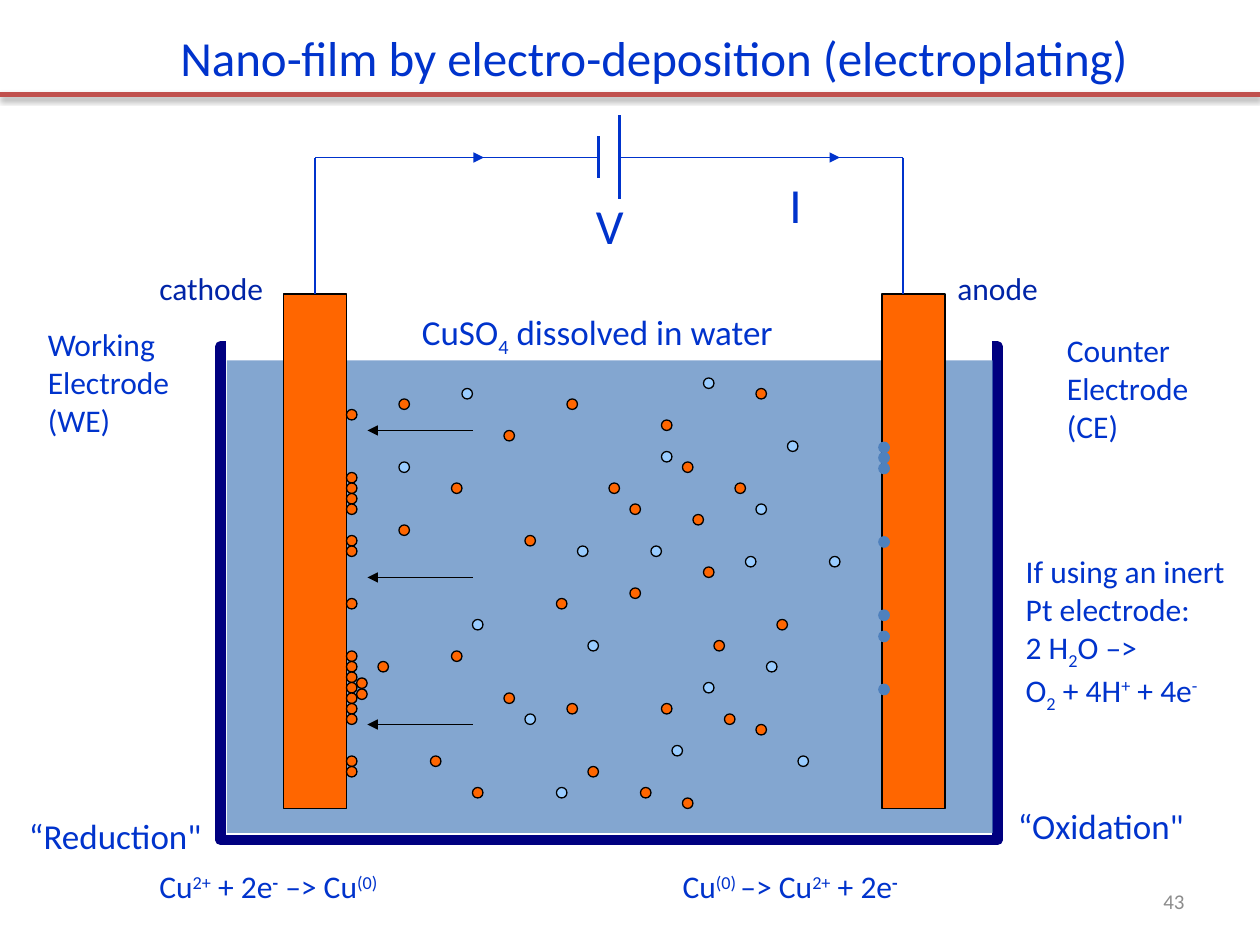
from lxml import etree
from pptx import Presentation
from pptx.dml.color import RGBColor
from pptx.enum import shapes, text
from pptx.oxml import ns
from pptx.util import Pt

BLUE = RGBColor(0x00, 0x33, 0xCC)
DARK_BLUE = RGBColor(0x00, 0x24, 0xA7)
NAVY = RGBColor(0x00, 0x00, 0x80)
WATER = RGBColor(0x4F, 0x81, 0xBD)
COPPER = RGBColor(0xFF, 0x66, 0x00)
PALE = RGBColor(0x99, 0xCC, 0xFF)
RED = RGBColor(0xC0, 0x50, 0x4D)
GREY = RGBColor(0x8C, 0x8C, 0x8C)
BLACK = RGBColor(0, 0, 0)
WHITE = RGBColor(0xFF, 0xFF, 0xFF)

SUP, SUB = 30, -25
ION = 6
RECT, OVAL = shapes.MSO_SHAPE.RECTANGLE, shapes.MSO_SHAPE.OVAL

TITLE = [["Nano-film by electro-deposition (electroplating)"]]

LABELS = [
    ((333.4, 108, 30, 41), [["V"]], {"size": 28}),
    ((444, 96, 21.6, 41), [["I"]], {"size": 28}),
    ((84, 492, 149, 29),
     [["Cu", ("2+", SUP), " + 2e", ("-", SUP, True), " –> Cu", ("(0)", SUP)]], {}),
    ((383, 492, 147.6, 29),
     [["Cu", ("(0) ", SUP), "–> Cu", ("2+", SUP), " + 2e", ("-", SUP, True)]], {}),
    ((9.4, 462, 113.8, 31.5), [["“Reduction\""]], {"size": 20}),
    ((574.6, 456, 110.2, 31.5), [["“Oxidation\""]], {"size": 20}),
    ((234, 174, 218, 31.5), [["CuSO", ("4", SUB), " dissolved in water"]], {"size": 20}),
    ((540, 150, 63.4, 30), [["anode"]], {"color": DARK_BLUE, "wrap": True}),
    ((84, 150, 80.6, 29), [["cathode"]], {"color": DARK_BLUE, "wrap": True}),
    ((579, 312, 129, 94.3),
     [["If using an inert Pt electrode:"],
      ["2 H", ("2", SUB), "O –>"],
      ["O", ("2", SUB), " + 4H", ("+", SUP), " + 4e", ("-", SUP)]], {"wrap": True}),
    ((20.2, 182.2, 85, 72.7), [["Working"], ["Electrode"], ["(WE)"]], {}),
    ((602.6, 185.8, 85, 72.7), [["Counter"], ["Electrode"], ["(CE)"]], {}),
    ((516, 500.4, 168, 28.8), [["43"]],
     {"size": 12, "color": GREY, "wrap": True,
      "align": text.PP_ALIGN.RIGHT, "anchor": text.MSO_ANCHOR.MIDDLE}),
]

CIRCUIT = [
    ((516, 90), (516, 168), 0.75), ((180, 90), (180, 168), 0.75),
    ((342, 78), (342, 102), 2.25), ((354, 66), (354, 114), 2.25),
    ((354, 90), (516, 90), 0.75), ((180, 90), (342, 90), 0.75),
]
CURRENT_STARTS = [426, 222.5]
DRIFT_ROWS = [246, 330, 414]

COPPER_IONS = [
    (228, 300), (258, 276), (228, 228), (324, 228), (402, 324), (318, 342),
    (258, 372), (348, 276), (288, 396), (246, 432), (378, 402), (336, 438),
    (390, 456), (216, 378), (324, 402), (270, 450), (366, 450), (444, 354),
    (360, 336), (300, 306), (432, 414), (360, 288), (288, 246), (420, 276),
    (378, 240), (432, 222), (408, 366), (414, 408), (390, 264), (396, 294),
]
SULFATE_IONS = [
    (432, 288), (426, 318), (438, 378), (384, 426), (318, 450), (300, 408),
    (336, 366), (372, 312), (378, 258), (402, 216), (450, 252), (474, 318),
    (456, 432), (402, 390), (330, 312), (264, 222), (228, 264), (270, 354),
]
DEPOSIT_ROWS = [234, 270, 276, 282, 288, 306, 312, 342, 372, 378, 384,
                390, 396, 402, 408, 432, 438]
SECOND_LAYER = [(203.8, 387.4), (203.8, 393.7)]
ANODE_PITS = [252.7, 258.6, 264.7, 306.7, 348.6, 360.7, 391]


def points(values):
    return [Pt(value) for value in values]


def write(frame, paragraphs, size=18, color=BLUE, wrap=False,
          align=text.PP_ALIGN.LEFT, anchor=text.MSO_ANCHOR.TOP):
    frame.word_wrap = wrap
    frame.auto_size = text.MSO_AUTO_SIZE.NONE
    frame.vertical_anchor = anchor
    for index, pieces in enumerate(paragraphs):
        paragraph = frame.add_paragraph() if index else frame.paragraphs[0]
        paragraph.alignment = align
        for piece in pieces:
            words, shift, bold = ((piece, 0) if isinstance(piece, str) else piece) + (False,) \
                if isinstance(piece, str) or len(piece) == 2 else piece
            run = paragraph.add_run()
            run.text = words
            run.font.name, run.font.size, run.font.bold = "Calibri", Pt(size), bold
            run.font.color.rgb = color
            if shift:
                run._r.get_or_add_rPr().set("baseline", str(shift * 1000))


def child(parent, tag, **attributes):
    return etree.SubElement(parent, ns.qn(tag), attributes)


def draw(slide, kind, box, fill=None, line=BLACK, width=0.75, opacity=None):
    shape = slide.shapes.add_shape(kind, *points(box))
    shape.shadow.inherit = False
    if fill is None:
        shape.fill.background()
    else:
        shape.fill.solid()
        shape.fill.fore_color.rgb = fill
    if opacity:
        swatch = shape._element.spPr.find(".//" + ns.qn("a:srgbClr"))
        child(swatch, "a:alpha", val=str(opacity * 1000))
    if line is None:
        shape.line.fill.background()
    else:
        shape.line.color.rgb = line
        shape.line.width = Pt(width)


def connect(slide, start, end, color=BLUE, width=0.75, arrow=False, shadow=False):
    wire = slide.shapes.add_connector(shapes.MSO_CONNECTOR.STRAIGHT, *points(start + end))
    wire.line.color.rgb = color
    wire.line.width = Pt(width)
    if arrow:
        child(wire.line._get_or_add_ln(), "a:tailEnd", type="triangle")
    effects = child(wire._element.spPr, "a:effectLst")
    if shadow:
        cast = child(effects, "a:outerShdw", blurRad=str(Pt(3.1)), dist=str(Pt(1.6)),
                     dir="5400000", rotWithShape="0")
        child(child(cast, "a:srgbClr", val="000000"), "a:alpha", val="38000")


def main():
    deck = Presentation()
    deck.slide_width, deck.slide_height = Pt(720), Pt(540)
    slide = deck.slides.add_slide(deck.slide_layouts[5])

    title = slide.shapes.title
    title.left, title.top, title.width, title.height = points((95.8, 12.2, 562.3, 41))
    write(title.text_frame, TITLE, size=28)
    connect(slide, (0, 54), (720, 54), color=RED, width=3, shadow=True)

    draw(slide, RECT, (126, 198, 444, 282), line=NAVY, width=6)
    draw(slide, RECT, (129.6, 180, 437, 36), fill=WHITE, line=WHITE)
    draw(slide, RECT, (129.6, 206, 437.8, 270), fill=WATER, line=None, opacity=70)
    for left in (162, 504):
        draw(slide, RECT, (left, 168, 36, 294), fill=COPPER)

    for start, end, width in CIRCUIT:
        connect(slide, start, end, width=width)
    for left in CURRENT_STARTS:
        connect(slide, (left, 90), (left + 54, 90), arrow=True)
    for row in DRIFT_ROWS:
        connect(slide, (270, row), (210, row), color=BLACK, arrow=True)

    deposit = [(198, row) for row in DEPOSIT_ROWS] + SECOND_LAYER
    pits = [(502.2, row) for row in ANODE_PITS]
    for spots, fill, line in ((COPPER_IONS + deposit, COPPER, BLACK),
                              (SULFATE_IONS, PALE, BLACK), (pits, WATER, WATER)):
        for spot in spots:
            draw(slide, OVAL, spot + (ION, ION), fill=fill, line=line)

    for box, paragraphs, style in LABELS:
        write(slide.shapes.add_textbox(*points(box)).text_frame, paragraphs, **style)

    deck.save("out.pptx")


if __name__ == "__main__":
    main()
